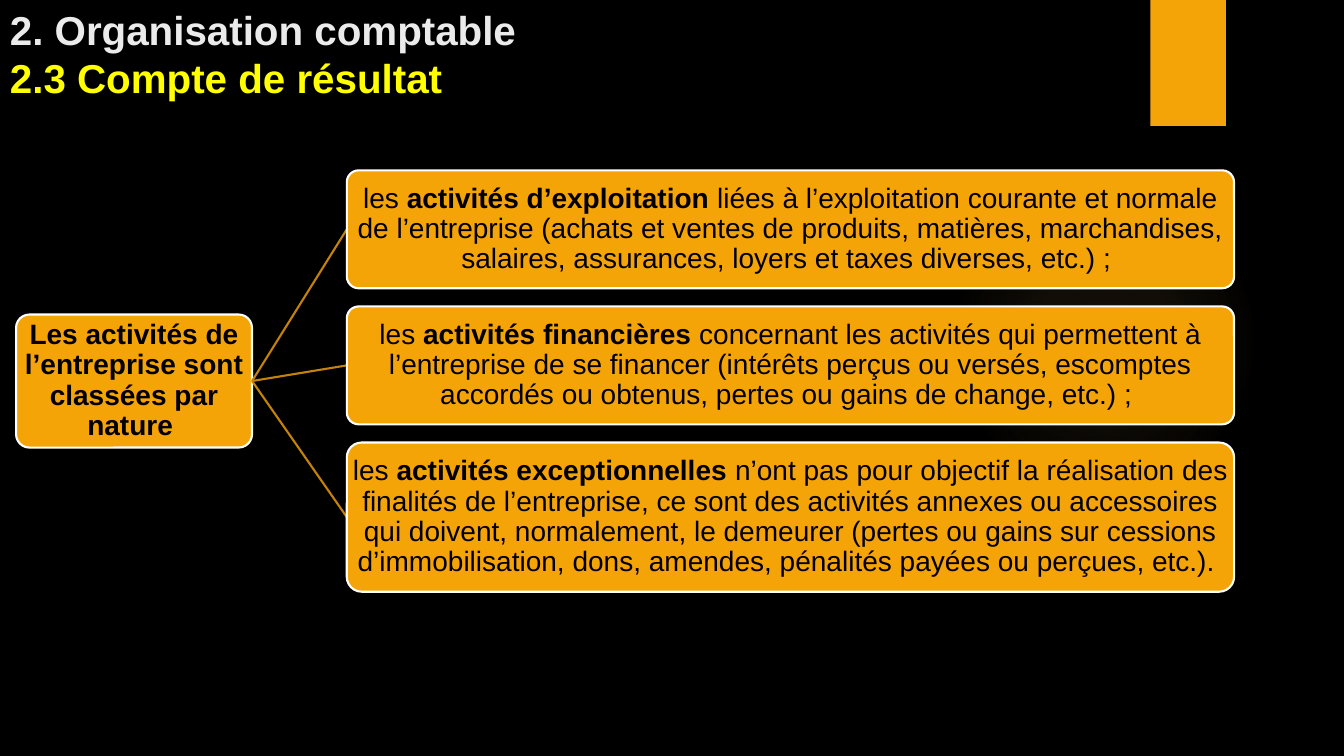
from lxml import etree
from pptx import Presentation
from pptx.dml.color import RGBColor
from pptx.enum import shapes, text
from pptx.oxml import ns
from pptx.util import Inches, Pt

BLACK = RGBColor(0x00, 0x00, 0x00)
WHITE = RGBColor(0xFF, 0xFF, 0xFF)
PALE_GREY = RGBColor(0xEB, 0xEB, 0xEB)
YELLOW = RGBColor(0xFF, 0xFF, 0x00)
ORANGE = RGBColor(0xF5, 0xA4, 0x08)
LIGHT_ORANGE = RGBColor(0xFA, 0xC9, 0x6A)
DARK_ORANGE = RGBColor(0xC4, 0x83, 0x06)

ROOT = (0.16, 3.12, 2.34, 1.32)
ROOT_TEXT = "Les activités de l’entreprise sont classées par nature "
BRANCH_LEFT, BRANCH_TOP, BRANCH_WIDTH, BRANCH_GAP = 3.44, 1.69, 8.8, 0.18
# Height, bold name and description of each kind of activity
ACTIVITIES = [
    (1.17, "activités d’exploitation ",
     "liées à l’exploitation courante et normale de l’entreprise (achats et "
     "ventes de produits, matières, marchandises, salaires, assurances, "
     "loyers et taxes diverses, etc.) ; "),
    (1.17, "activités financières ",
     "concernant les activités qui permettent à l’entreprise de se financer "
     "(intérêts perçus ou versés, escomptes accordés ou obtenus, pertes ou "
     "gains de change, etc.) ; "),
    (1.48, "activités exceptionnelles ",
     "n’ont pas pour objectif la réalisation des finalités de l’entreprise, "
     "ce sont des activités annexes ou accessoires qui doivent, normalement, "
     "le demeurer (pertes ou gains sur cessions d’immobilisation, dons, "
     "amendes, pénalités payées ou perçues, etc.). "),
]


class SlideBuilder:
    font = "Arial"
    line_width = Pt(1.5)

    def __init__(self, deck):
        self.slide = deck.slides.add_slide(deck.slide_layouts[6])
        background = self.slide.background.fill
        background.solid()
        background.fore_color.rgb = BLACK

    def shape(self, kind, box, fill=ORANGE):
        item = self.slide.shapes.add_shape(kind, *map(Inches, box))
        item.shadow.inherit = False
        item.fill.solid()
        item.fill.fore_color.rgb = fill
        item.line.fill.background()
        return item

    def glow(self, box, stops):
        """Ellipse fading outwards; stops are (position %, opacity %)."""
        halo = self.shape(shapes.MSO_SHAPE.OVAL, box)
        solid = halo.fill._xPr.find(ns.qn("a:solidFill"))
        gradient = etree.Element(ns.qn("a:gradFill"))
        stop_list = etree.SubElement(gradient, ns.qn("a:gsLst"))
        for position, opacity in stops:
            stop = etree.SubElement(stop_list, ns.qn("a:gs"), pos=str(position * 1000))
            color = etree.SubElement(stop, ns.qn("a:srgbClr"), val=str(LIGHT_ORANGE))
            etree.SubElement(color, ns.qn("a:alpha"), val=str(opacity * 1000))
        radial = etree.SubElement(gradient, ns.qn("a:path"), path="circle")
        etree.SubElement(radial, ns.qn("a:fillToRect"),
                         dict.fromkeys("ltrb", "50000"))
        solid.getparent().replace(solid, gradient)

    def title(self, box, lines):
        frame = self.slide.shapes.add_textbox(*map(Inches, box)).text_frame
        frame.word_wrap = True
        frame.vertical_anchor = text.MSO_ANCHOR.BOTTOM
        for index, (wording, color) in enumerate(lines):
            line = frame.add_paragraph() if index else frame.paragraphs[0]
            line.text = wording
            self.style(line.font, 28.8, color, True)

    def style(self, font, size, color, bold=None):
        font.name, font.size, font.bold = self.font, Pt(size), bold
        font.color.rgb = color

    def node(self, box, runs):
        """Rounded box with centred text; runs are (wording, bold)."""
        card = self.shape(shapes.MSO_SHAPE.ROUNDED_RECTANGLE, box)
        card.adjustments[0] = 0.1
        card.line.color.rgb = WHITE
        card.line.width = self.line_width
        frame = card.text_frame
        frame.word_wrap = True
        frame.vertical_anchor = text.MSO_ANCHOR.MIDDLE
        frame.margin_left = frame.margin_right = Inches(0.01)
        frame.margin_top = frame.margin_bottom = Inches(0.01)
        label = frame.paragraphs[0]
        label.alignment = text.PP_ALIGN.CENTER
        label.line_spacing = 0.9
        self.style(label.font, 20, BLACK)
        for wording, bold in runs:
            run = label.add_run()
            run.text = wording
            run.font.bold = bold

    def link(self, *ends):
        branch = self.slide.shapes.add_connector(
            shapes.MSO_CONNECTOR.STRAIGHT, *map(Inches, ends))
        branch.line.color.rgb = DARK_ORANGE
        branch.line.width = self.line_width
        etree.SubElement(branch.line._ln.getparent(), ns.qn("a:effectLst"))


def main():
    deck = Presentation()
    deck.slide_width, deck.slide_height = Inches(13.33), Inches(7.5)
    page = SlideBuilder(deck)
    page.glow((9.41, 1.83, 3.08, 3.08), [(0, 7), (36, 6), (69, 0)])
    page.shape(shapes.MSO_SHAPE.RECTANGLE, (11.41, 0, 0.75, 1.25))
    page.title((0, 0.03, 11.22, 1.03),
               [("2. Organisation comptable", PALE_GREY),
                ("2.3 Compte de résultat", YELLOW)])

    page.node(ROOT, [(ROOT_TEXT, True)])
    left, top, width, height = ROOT
    root_end = (left + width, top + height / 2)
    branch_top = BRANCH_TOP
    for branch_height, name, description in ACTIVITIES:
        page.link(*root_end, BRANCH_LEFT, branch_top + branch_height / 2)
        page.node((BRANCH_LEFT, branch_top, BRANCH_WIDTH, branch_height),
                  [("les ", False), (name, True), (description, False)])
        branch_top += branch_height + BRANCH_GAP
    deck.save("out.pptx")


if __name__ == "__main__":
    main()
